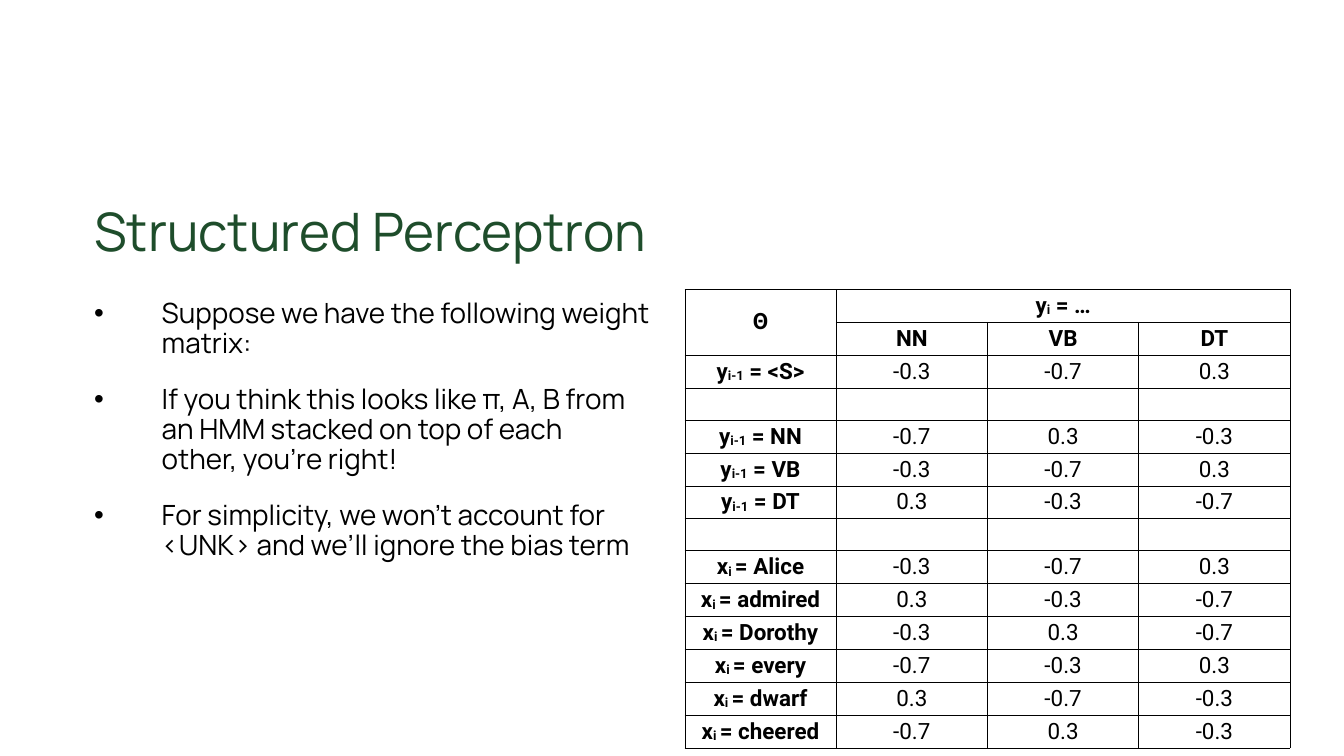
from pptx import Presentation
from pptx.dml.color import RGBColor as Rgb
from pptx.enum.text import MSO_ANCHOR as Anchor, PP_ALIGN as Align
from pptx.oxml import parse_xml
from pptx.oxml.ns import nsdecls
from pptx.util import Inches, Pt

INK = {"title": "1E4D2B", "text": "000000", "line": "000000"}
POINTS = [
    ["Suppose we have the following weight matrix:"],
    ["If you think this looks like π, A, B from",
     "an HMM stacked on top of each", "other, you’re right!"],
    ["For simplicity, we won’t account for",
     "<UNK> and we’ll ignore the bias term"],
]
HEAD = [
    [("Θ",), ("y", "i", " = …"), (), ()],
    [(), ("NN",), ("VB",), ("DT",)],
]
ROWS = [
    (("y", "i-1", " = <S>"), "-0.3 -0.7 0.3"),
    None,
    (("y", "i-1", " = NN"), "-0.7 0.3 -0.3"),
    (("y", "i-1", " = VB"), "-0.3 -0.7 0.3"),
    (("y", "i-1", " = DT"), "0.3 -0.3 -0.7"),
    None,
    (("x", "i ", "= Alice"), "-0.3 -0.7 0.3"),
    (("x", "i ", "= admired"), "0.3 -0.3 -0.7"),
    (("x", "i ", "= Dorothy"), "-0.3 0.3 -0.7"),
    (("x", "i ", "= every"), "-0.7 -0.3 0.3"),
    (("x", "i ", "= dwarf"), "0.3 -0.7 -0.3"),
    (("x", "i ", "= cheered"), "-0.7 0.3 -0.3"),
]


class Deck:
    def __init__(self, wide, high):
        self.file = Presentation()
        self.file.slide_width = Inches(wide)
        self.file.slide_height = Inches(high)
        self.slide = self.file.slides.add_slide(self.file.slide_layouts[6])

    def place(self, x, y, w, h):
        wide, high = self.file.slide_width, self.file.slide_height
        return [int(part * size / 100) for part, size in
                ((x, wide), (y, high), (w, wide), (h, high))]

    def run(self, para, text, face, size, ink, bold=False):
        run = para.add_run()
        run.text = text
        font = run.font
        font.name, font.size, font.bold = face, Pt(size), bold
        font.color.rgb = Rgb.from_string(INK[ink])
        return run

    def box(self, area, anchor):
        frame = self.slide.shapes.add_textbox(*self.place(*area)).text_frame
        frame.word_wrap = True
        frame.vertical_anchor = anchor
        frame.margin_left = frame.margin_right = Inches(0.1)
        frame.margin_top = frame.margin_bottom = Inches(0.1)
        return frame

    def title(self, area, text):
        para = self.box(area, Anchor.MIDDLE).paragraphs[0]
        self.run(para, text, "Manrope", 75.7, "title")

    def bullets(self, area, points):
        frame = self.box(area, Anchor.TOP)
        for n, lines in enumerate(points):
            para = frame.add_paragraph() if n else frame.paragraphs[0]
            props = para._p.get_or_add_pPr()
            props.set("marL", str(Inches(1.34)))
            props.set("indent", str(-Inches(1.34)))
            props.append(parse_xml(f'<a:buFont {nsdecls("a")} typeface="Arial"/>'))
            props.append(parse_xml(f'<a:buChar {nsdecls("a")} char="•"/>'))
            para.line_spacing = 0.9
            if n:
                para.space_before = Pt(37)
            for k, line in enumerate(lines):
                if k:
                    para.add_line_break()
                self.run(para, line, "Manrope", 39.8, "text")

    def cell(self, cell, parts, bold):
        props = cell._tc.get_or_add_tcPr()
        for side in "LRTB":
            props.append(parse_xml(
                f'<a:ln{side} {nsdecls("a")} w="12700"><a:solidFill>'
                f'<a:srgbClr val="{INK["line"]}"/></a:solidFill></a:ln{side}>'))
        cell.fill.background()
        cell.vertical_anchor = Anchor.MIDDLE
        cell.margin_left = cell.margin_right = Inches(0.06)
        cell.margin_top = cell.margin_bottom = Inches(0.06)
        para = cell.text_frame.paragraphs[0]
        para.alignment = Align.CENTER
        for n, text in enumerate(parts):
            run = self.run(para, text, "Roboto", 32, "text", bold)
            if n == 1:
                run.font._element.set("baseline", "-6000")

    def table(self, area, head, rows):
        grid = head + [
            [row[0]] + [(v,) for v in row[1].split()] if row else [()] * 4
            for row in rows]
        table = self.slide.shapes.add_table(
            len(grid), 4, *self.place(*area)).table
        table.first_row = table.horz_banding = False
        for r, line in enumerate(grid):
            for c, parts in enumerate(line):
                self.cell(table.cell(r, c), parts, r < len(head) or c == 0)
        table.cell(0, 0).merge(table.cell(1, 0))
        table.cell(0, 1).merge(table.cell(0, 3))


deck = Deck(26.67, 15)
deck.title((6.64, 24.87, 89.69, 11.2), "Structured Perceptron")
deck.bullets((6.64, 38.93, 43.38, 51.87), POINTS)
deck.table((50.96, 38.27, 45.03, 58.93), HEAD, ROWS)
deck.file.save("out.pptx")
